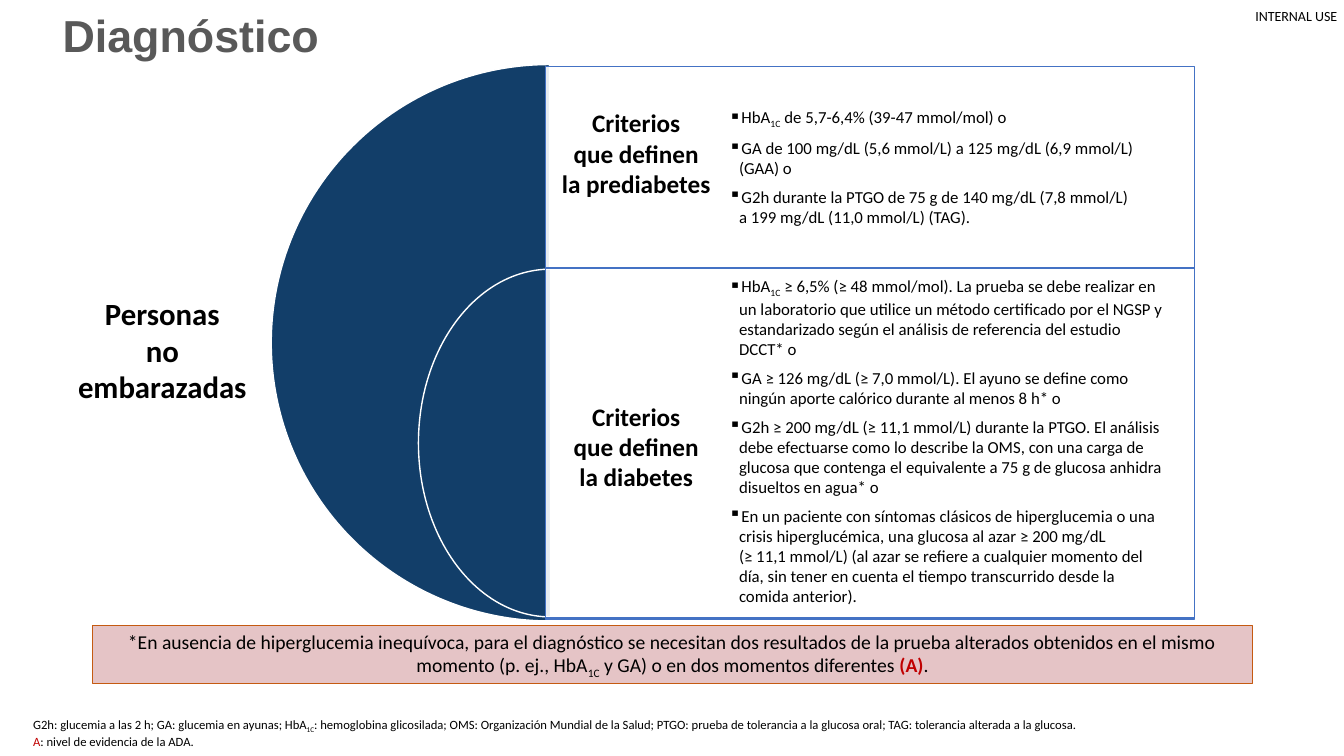
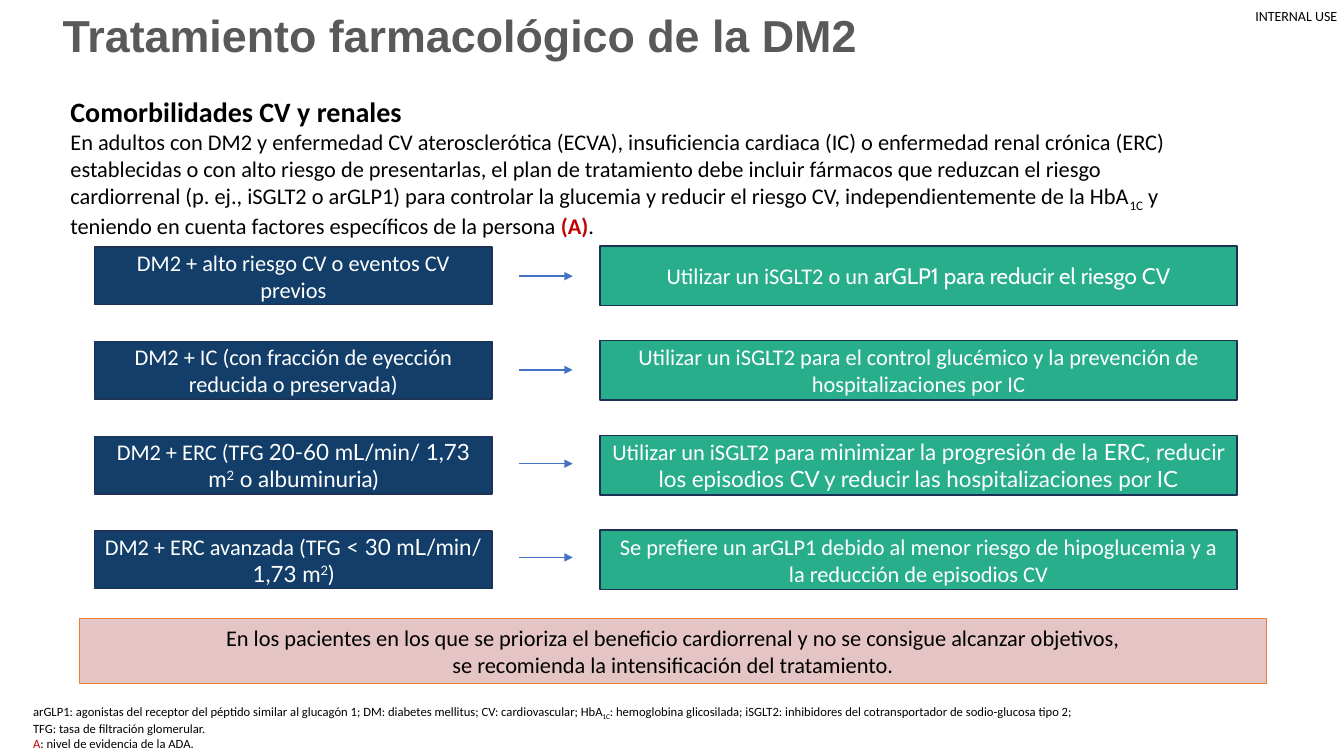
import pptx
import pptx.util
import pptx.dml.color
import pptx.enum.shapes
import pptx.enum.text
import pptx.oxml.ns
from lxml import etree

Inches = pptx.util.Inches
Pt = pptx.util.Pt
RGBColor = pptx.dml.color.RGBColor
SHAPE = pptx.enum.shapes.MSO_SHAPE
ALIGN = pptx.enum.text.PP_ALIGN
ANCHOR = pptx.enum.text.MSO_ANCHOR
qn = pptx.oxml.ns.qn

BLACK = RGBColor(0x00, 0x00, 0x00)
WHITE = RGBColor(0xFF, 0xFF, 0xFF)
GREY = RGBColor(0x59, 0x59, 0x59)
NAVY = RGBColor(0x12, 0x3E, 0x69)
DARK_NAVY = RGBColor(0x1E, 0x32, 0x56)
BLUE = RGBColor(0x44, 0x72, 0xC4)
GREEN = RGBColor(0x29, 0xAE, 0x8B)
PINK = RGBColor(0xE5, 0xC4, 0xC6)
RUST = RGBColor(0xC5, 0x5A, 0x11)
ORANGE = RGBColor(0xED, 0x7D, 0x31)
RED = RGBColor(0xC0, 0x00, 0x00)

# Runs that recur in the text
ONE_C = ("1C", {"base": -25})
SQUARED = ("2", {"base": 30, "font": "Lato"})
GRADE_A = ("(A)", {"color": RED, "bold": True})
EVIDENCE = [("A", {"color": RED}), ": nivel de evidencia de la ADA."]


def write(shape, paragraphs, size=16, color=BLACK, bold=False, font="Calibri",
          align=ALIGN.LEFT, anchor=None, inset=None, bullet=None, after=None, spacing=None):
    """Each paragraph is a string or a list of runs; a run is a string or (text, changes)."""
    frame = shape.text_frame
    frame.word_wrap = True
    if anchor is not None:
        frame.vertical_anchor = anchor
    if inset is not None:
        frame.margin_left = frame.margin_right = Inches(inset)
        frame.margin_top = frame.margin_bottom = Inches(inset)
    for number, runs in enumerate(paragraphs):
        paragraph = frame.add_paragraph() if number else frame.paragraphs[0]
        if bullet:
            properties = paragraph._p.get_or_add_pPr()
            properties.set("marL", str(Inches(0.1)))
            properties.set("indent", str(-Inches(0.1)))
            etree.SubElement(properties, qn("a:buChar"), char=bullet)
        paragraph.alignment = align
        if after is not None:
            paragraph.space_after = Pt(after)
        if spacing is not None:
            paragraph.line_spacing = spacing
        for item in [runs] if isinstance(runs, str) else runs:
            text, changes = (item, {}) if isinstance(item, str) else item
            for line_number, line in enumerate(text.split("\n")):
                if line_number:
                    paragraph.add_line_break()
                    etree.SubElement(paragraph._p[-1], qn("a:rPr"), sz=str(size * 100))
                run = paragraph.add_run()
                run.text = line
                run.font.name = changes.get("font", font)
                run.font.size = Pt(changes.get("size", size))
                run.font.bold = changes.get("bold", bold)
                run.font.color.rgb = changes.get("color", color)
                if "base" in changes:
                    run._r.get_or_add_rPr().set("baseline", str(changes["base"] * 1000))


def place(slide, at, kind=None, fill=None, line=None, width=1):
    """Adds a preset shape at (left, top, width, height), or a text box without a kind."""
    box = [Inches(length) for length in at]
    if kind is None:
        return slide.shapes.add_textbox(*box)
    shape = slide.shapes.add_shape(kind, *box)
    shape.shadow.inherit = False
    shape.fill.solid()
    shape.fill.fore_color.rgb = fill
    shape.line.color.rgb = line
    shape.line.width = Pt(width)
    return shape


deck = pptx.Presentation()
deck.slide_width = Inches(13.33)
deck.slide_height = Inches(7.5)
title_only = deck.slide_layouts[5]

# Shared title place, classification mark, titles and abbreviations
layout_title = title_only.placeholders[0]
layout_title.left, layout_title.top = Inches(0.52), Inches(-0.39)
layout_title.width, layout_title.height = Inches(11.54), Inches(1.54)

headings = ["Diagnóstico", "Tratamiento farmacológico de la DM2"]
abbreviations = [
    (7.06, ["G2h: glucemia a las 2 h; GA: glucemia en ayunas; HbA", ONE_C,
            ": hemoglobina glicosilada; OMS: Organización Mundial de la Salud; PTGO: prueba de "
            "tolerancia a la glucosa oral; TAG: tolerancia alterada a la glucosa."]),
    (6.93, ["arGLP1: agonistas del receptor del péptido similar al glucagón 1; DM: diabetes "
            "mellitus; CV: cardiovascular; HbA", ONE_C,
            ": hemoglobina glicosilada; iSGLT2: inhibidores del cotransportador de sodio-glucosa "
            "tipo 2; TFG: tasa de filtración glomerular."]),
]
callouts = [
    ((0.92, 6.21, 11.5, 0.57), RUST, 14,
     ["*En ausencia de hiperglucemia inequívoca, para el diagnóstico se necesitan dos resultados "
      "de la prueba alterados obtenidos en el mismo momento (p. ej., HbA", ONE_C,
      " y GA) o en dos momentos diferentes ", GRADE_A, "."]),
    ((0.79, 6.14, 11.77, 0.64), ORANGE, 16,
     "En los pacientes en los que se prioriza el beneficio cardiorrenal y no se consigue alcanzar "
     "objetivos,\nse recomienda la intensificación del tratamiento."),
]
for heading, (notes_top, notes), (at, border, size, message) in zip(
        headings, abbreviations, callouts):
    slide = deck.slides.add_slide(title_only)
    write(slide.shapes.title, [heading], size=32, color=GREY, bold=True, font="Arial",
          anchor=ANCHOR.MIDDLE, spacing=0.9)
    callout = place(slide, at, SHAPE.RECTANGLE, PINK, border, 0.75)
    write(callout, [message], size=size, align=ALIGN.CENTER)
    footnote = place(slide, (0.23, notes_top, 10.68, 7.47 - notes_top))
    write(footnote, [notes, EVIDENCE], size=9)

diagnosis, treatment = deck.slides

classification = place(diagnosis, (12.45, 0.07, 0.88, 0.17))
write(classification, ["INTERNAL USE"], size=10, inset=0)
title_only.shapes.element.append(classification.element)

# Diagnosis: nested half circles with their criteria
criteria = [
    {"circle": (2.69, 0.64, 5.52, 5.52), "panel": (5.41, 0.66, 6.44, 5.48),
     "list": (6.96, 0.67, 4.89, 1.97), "caption_top": 1.02, "condition": "la prediabetes",
     "points": [
         ["HbA", ONE_C, " de 5,7-6,4% (39-47 mmol/mol) o"],
         "GA de 100 mg/dL (5,6 mmol/L) a 125 mg/dL (6,9 mmol/L) (GAA) o",
         "G2h durante la PTGO de 75 g de 140 mg/dL (7,8 mmol/L)\n"
         "a 199 mg/dL (11,0 mmol/L) (TAG)."]},
    {"circle": (4.15, 2.67, 2.62, 3.45), "panel": (5.41, 2.66, 6.44, 3.47),
     "list": (6.96, 2.69, 4.89, 3.37), "caption_top": 3.93, "condition": "la diabetes",
     "points": [
         ["HbA", ONE_C,
          " ≥ 6,5% (≥ 48 mmol/mol). La prueba se debe realizar en un laboratorio que utilice un "
          "método certificado por el NGSP y estandarizado según el análisis de referencia del "
          "estudio DCCT* o"],
         "GA ≥ 126 mg/dL (≥ 7,0 mmol/L). El ayuno se define como ningún aporte calórico durante "
         "al menos 8 h* o",
         "G2h ≥ 200 mg/dL (≥ 11,1 mmol/L) durante la PTGO. El análisis debe efectuarse como lo "
         "describe la OMS, con una carga de glucosa que contenga el equivalente a 75 g de glucosa "
         "anhidra disueltos en agua* o",
         "En un paciente con síntomas clásicos de hiperglucemia o una crisis hiperglucémica, una "
         "glucosa al azar ≥ 200 mg/dL\n(≥ 11,1 mmol/L) (al azar se refiere a cualquier momento "
         "del día, sin tener en cuenta el tiempo transcurrido desde la comida anterior)."]},
]
for group in criteria:
    half_circle = place(diagnosis, group["circle"], SHAPE.PIE, NAVY, WHITE)
    half_circle.adjustments[0] = 54
    half_circle.adjustments[1] = 162
    panel = place(diagnosis, group["panel"], SHAPE.RECTANGLE, WHITE, BLUE)
    panel_color = panel.element.spPr.find(qn("a:solidFill"))[0]
    etree.SubElement(panel_color, qn("a:alpha"), val="90000")
    points = place(diagnosis, group["list"])
    write(points, group["points"], size=12, anchor=ANCHOR.MIDDLE, inset=0.27,
          bullet="▪", after=6)
    caption = place(diagnosis, (5.37, group["caption_top"], 1.88, 1.01))
    write(caption, ["Criterios", "que definen", group["condition"]], size=18, bold=True,
          align=ALIGN.CENTER)

population = place(diagnosis, (0.49, 2.87, 2.24, 1.21))
write(population, ["Personas", "no embarazadas"], size=22, bold=True, align=ALIGN.CENTER)

# Treatment: each condition leads to a recommendation
introduction = place(treatment, (0.6, 0.89, 11.48, 1.51))
write(introduction, [
    [("Comorbilidades CV y renales", {"size": 20, "bold": True})],
    ["En adultos con DM2 y enfermedad CV aterosclerótica (ECVA), insuficiencia cardiaca (IC) o "
     "enfermedad renal crónica (ERC) establecidas o con alto riesgo de presentarlas, el plan de "
     "tratamiento debe incluir fármacos que reduzcan el riesgo cardiorrenal (p. ej., iSGLT2 o "
     "arGLP1) para controlar la glucemia y reducir el riesgo CV, independientemente de la HbA",
     ONE_C, " y teniendo en cuenta factores específicos de la persona ", GRADE_A, "."],
])

LATO = {"font": "Lato"}
recommendations = [
    ("DM2 + alto riesgo CV o eventos CV previos",
     ["Utilizar un iSGLT2 o un",
      (" arGLP1 para reducir el riesgo CV", {"font": "Cabin"})]),
    ("DM2 + IC (con fracción de eyección reducida o preservada)",
     "Utilizar un iSGLT2 para el control glucémico y la prevención de hospitalizaciones por IC"),
    (["DM2 + ERC (TFG ", ("20-60 mL/min/ 1,73 m", LATO), SQUARED, (" o albuminuria)", LATO)],
     ["Utilizar un iSGLT2 para ",
      ("minimizar la progresión de la ERC, reducir los episodios CV y reducir las "
       "hospitalizaciones por IC", LATO)]),
    (["DM2 + ERC avanzada (TFG ", ("< 30 mL/min/ 1,73 m", LATO), SQUARED, (")", LATO)],
     "Se prefiere un arGLP1 debido al menor riesgo de hipoglucemia y a la reducción de "
     "episodios CV"),
]
for row, (condition, advice) in enumerate(recommendations):
    top = 2.45 + 0.94 * row
    for at, fill, text in [((0.94, top, 3.94, 0.57), NAVY, condition),
                           ((5.95, top - 0.01, 6.32, 0.59), GREEN, advice)]:
        box = place(treatment, at, SHAPE.RECTANGLE, fill, DARK_NAVY)
        write(box, [text], color=WHITE, align=ALIGN.CENTER, anchor=ANCHOR.MIDDLE)
    arrow_y = Inches(2.74 + 0.93 * row)
    arrow = treatment.shapes.add_connector(
        pptx.enum.shapes.MSO_CONNECTOR.STRAIGHT, Inches(5.15), arrow_y, Inches(5.68), arrow_y)
    arrow.line.color.rgb = BLUE
    arrow.line.width = Pt(1)
    etree.SubElement(arrow.line._get_or_add_ln(), qn("a:tailEnd"), type="triangle")
    etree.SubElement(arrow.element.spPr, qn("a:effectLst"))

deck.save("out.pptx")
